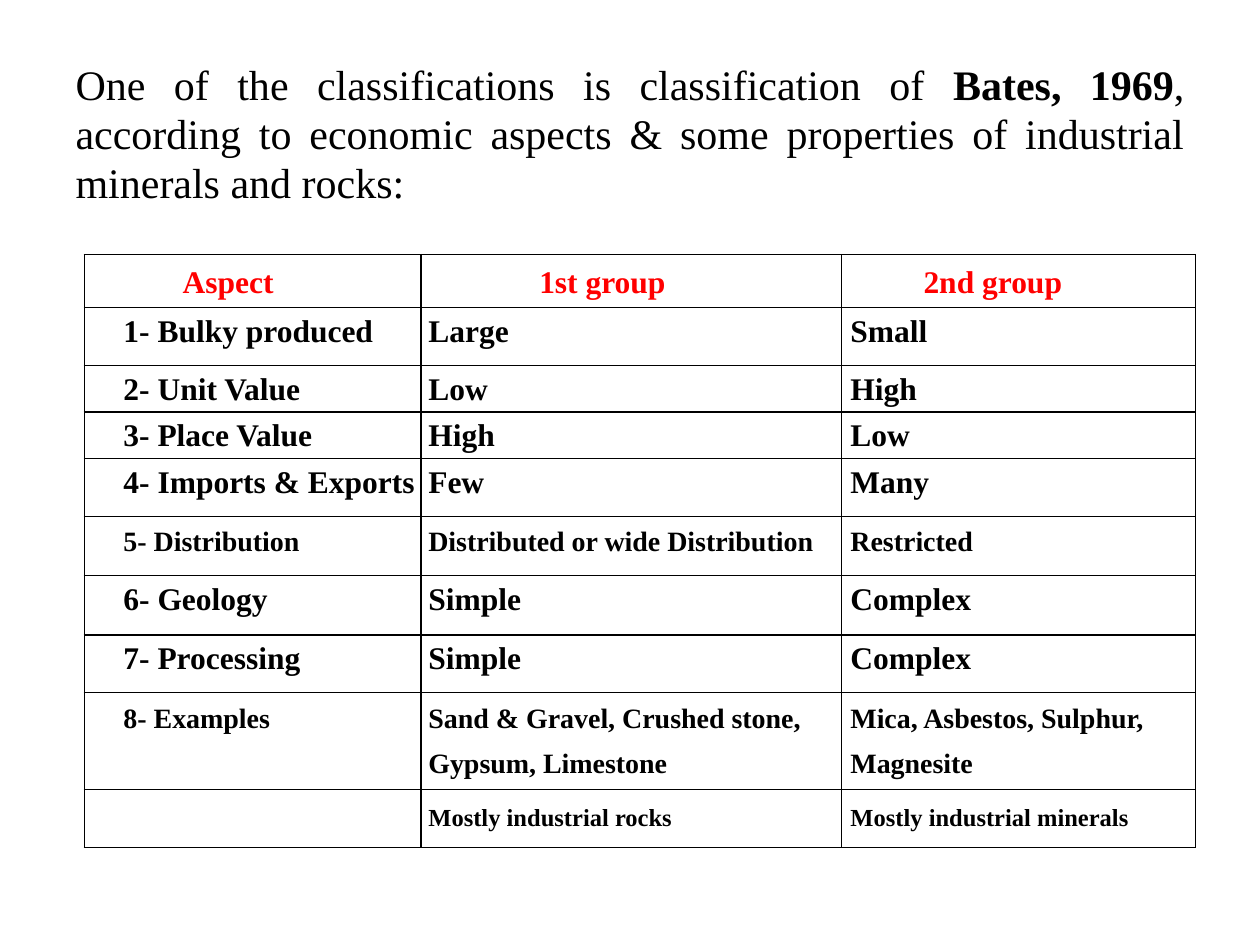
from lxml import etree
from pptx import Presentation
from pptx.dml.color import RGBColor
from pptx.enum.text import MSO_ANCHOR, PP_ALIGN
from pptx.oxml.ns import qn
from pptx.util import Inches, Pt

JUSTIFY = PP_ALIGN.JUSTIFY
BOTTOM = MSO_ANCHOR.BOTTOM
FONT = "Times New Roman"
COLORS = {"text": "000000", "heading": "FF0000", "border": "000000"}
NO_GRID_STYLE = "{2D5ABB26-0587-4C30-8999-92F81FD0307C}"
COLUMN_WIDTHS = [2.67, 3.34, 2.81]
HEADING_INDENTS = [0.78, 0.94, 0.65]
BODY_INDENTS = [0.31, 0.06, 0.07]
TEXT_ROW = 0.33

ROWS = [
    (["Aspect", "1st group", "2nd group"], 18, None, 0.36, 0.06),
    (["1- Bulky produced", "Large", "Small"], 18, 15.2, TEXT_ROW, 0.13),
    (["2- Unit Value", "Low", "High"], 18, 15.4, TEXT_ROW, 0.04),
    (["3- Place Value", "High", "Low"], 18, 15.4, TEXT_ROW, 0.04),
    (["4- Imports & Exports", "Few", "Many"], 18, 15.4, TEXT_ROW, 0.13),
    (["5- Distribution", "Distributed or wide Distribution", "Restricted"], 16, 15.2, TEXT_ROW, 0.14),
    (["6- Geology", "Simple", "Complex"], 18, 15.2, TEXT_ROW, 0.14),
    (["7- Processing", "Simple", "Complex"], 18, 15.2, TEXT_ROW, 0.13),
    (["8- Examples", "Sand & Gravel, Crushed stone,", "Mica, Asbestos, Sulphur,"], 16, 15.4, TEXT_ROW, None),
    (["", "Gypsum, Limestone", "Magnesite"], 16, None, 0.36, 0.08),
    (["", "Mostly industrial rocks", "Mostly industrial minerals"], 14, 15.4, TEXT_ROW, 0.13),
]


def format_font(font, size, color, bold):
    font.name = FONT
    font.size = Pt(size)
    font.bold = bold
    font.color.rgb = RGBColor.from_string(COLORS[color])


def add_border(cell, side):
    line = etree.SubElement(cell._tc.get_or_add_tcPr(), qn(f"a:ln{side}"), w=str(Pt(1)))
    fill = etree.SubElement(line, qn("a:solidFill"))
    etree.SubElement(fill, qn("a:srgbClr"), val=COLORS["border"])


presentation = Presentation()
presentation.slide_width = Inches(10)
presentation.slide_height = Inches(7.5)
slide = presentation.slides.add_slide(presentation.slide_layouts[1])
title = slide.shapes.title
title._element.getparent().remove(title._element)

body = slide.placeholders[1]
body.left, body.top = Inches(0.5), Inches(0.44)
body.width, body.height = Inches(9), Inches(6.61)
paragraph = body.text_frame.paragraphs[0]
properties = paragraph._p.get_or_add_pPr()
properties.set("marL", "0")
properties.set("indent", "0")
etree.SubElement(properties, qn("a:buNone"))
paragraph.alignment = JUSTIFY
paragraph.line_spacing = 0.97
paragraph.space_before = Pt(0)
for text, bold in [
    ("One of the classifications is classification of ", False),
    ("Bates, 1969", True),
    (", according to economic aspects & some properties of industrial minerals and rocks:", False),
]:
    run = paragraph.add_run()
    run.text = text
    format_font(run.font, 24, "text", bold)

table_rows = []
for texts, size, spacing, height, gap in ROWS:
    table_rows.append((texts, size, spacing, height, False))
    if gap:
        table_rows.append(([""] * len(texts), 1, None, gap, True))

frame = slide.shapes.add_table(
    len(table_rows), len(COLUMN_WIDTHS), Inches(0.67), Inches(2.02),
    Inches(sum(COLUMN_WIDTHS)), Inches(sum(row[3] for row in table_rows)),
)
table = frame.table
table.first_row = False
table.horz_banding = False
table._tbl.tblPr.find(qn("a:tableStyleId")).text = NO_GRID_STYLE
for column, width in zip(table.columns, COLUMN_WIDTHS):
    column.width = Inches(width)

for row_index, (texts, size, spacing, height, closes_group) in enumerate(table_rows):
    is_heading = row_index == 0
    table.rows[row_index].height = Inches(height)
    indents = HEADING_INDENTS if is_heading else BODY_INDENTS
    for column_index, text in enumerate(texts):
        cell = table.cell(row_index, column_index)
        cell.margin_left = cell.margin_right = cell.margin_top = cell.margin_bottom = 0
        cell.vertical_anchor = BOTTOM
        for side in "LR" + "T" * is_heading + "B" * closes_group:
            add_border(cell, side)
        cell.fill.background()
        paragraph = cell.text_frame.paragraphs[0]
        if text:
            paragraph.text = text
            paragraph._p.get_or_add_pPr().set("marL", str(Inches(indents[column_index])))
            if spacing:
                paragraph.line_spacing = Pt(spacing)
            format_font(paragraph.runs[0].font, size, "heading" if is_heading else "text", True)
        else:
            etree.SubElement(paragraph._p, qn("a:endParaRPr"), sz=str(size * 100))

presentation.save("out.pptx")
